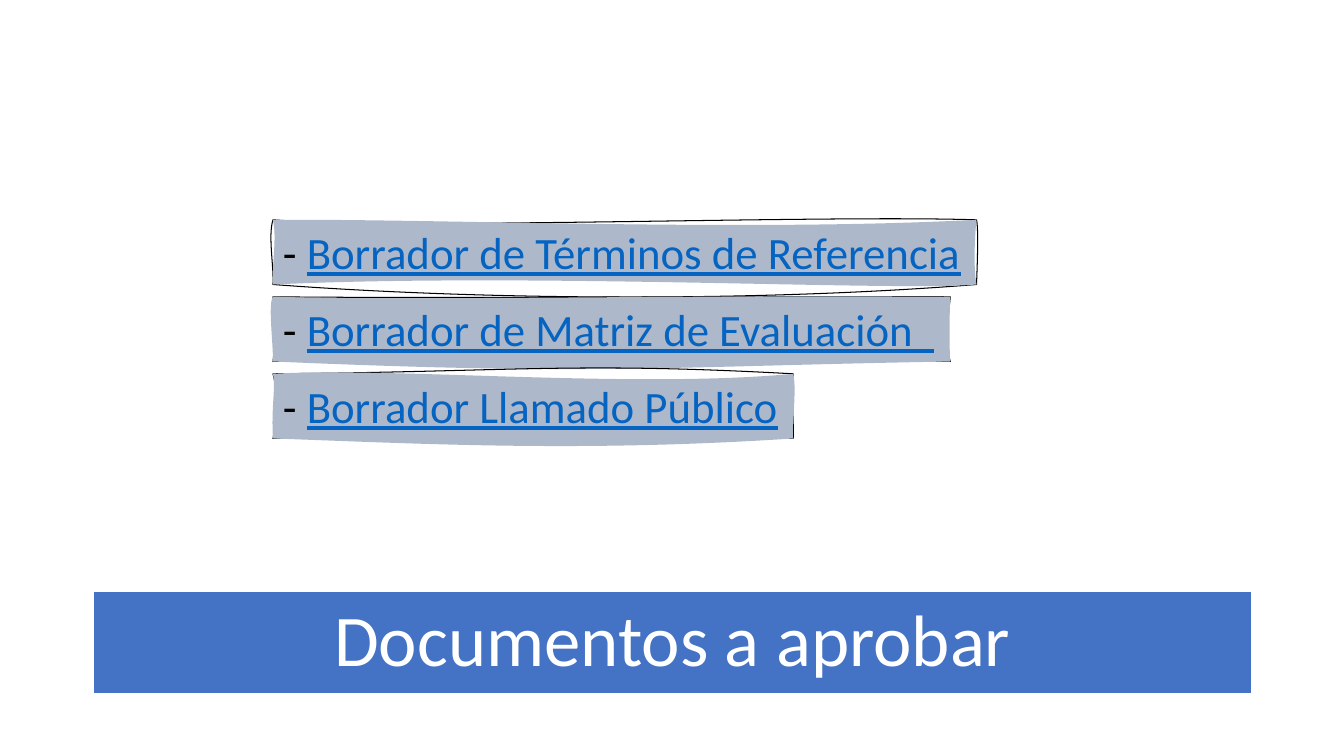
from pptx import Presentation
from pptx.dml.color import RGBColor
from pptx.enum.text import MSO_ANCHOR, MSO_AUTO_SIZE, PP_ALIGN
from pptx.oxml.ns import qn
from pptx.util import Cm, Pt
from lxml import etree

LEFT, CENTER = PP_ALIGN.LEFT, PP_ALIGN.CENTER
MIDDLE = MSO_ANCHOR.MIDDLE
FIT_SHAPE, NO_FIT = MSO_AUTO_SIZE.SHAPE_TO_FIT_TEXT, MSO_AUTO_SIZE.NONE

BLUE = RGBColor(0x44, 0x72, 0xC4)
GREY_BLUE = RGBColor(0xAD, 0xB9, 0xCA)
LINK_BLUE = RGBColor(0x05, 0x63, 0xC1)
BLACK = RGBColor(0, 0, 0)
WHITE = RGBColor(0xFF, 0xFF, 0xFF)
FONT = "Calibri"

UNITS_PER_CM = 100 / 2.54
LABEL_HEIGHT = Cm(1.63)
LABEL_PITCH = Cm(1.94)

# Text, width, then the curve controls of the outline and of the fill:
# two points for each of the top, right, bottom and left sides
DOCUMENTS = [
    ("Borrador de Términos de Referencia", Cm(17.73),
     [(135, 10, 543, -5), (700, 8, 699, 40), (471, 82, 199, 79), (1, 46, -5, 16)],
     [(175, -1, 463, 12), (696, 18, 695, 49), (619, 71, 258, 52), (-1, 41, 4, 18)]),
    ("Borrador de Matriz de Evaluación  ", Cm(17.07),
     [(223, 2, 505, -1), (669, 28, 667, 49), (475, 58, 139, 57), (3, 46, -2, 9)],
     [(140, 4, 392, -2), (671, 17, 671, 54), (386, 69, 324, 78), (0, 42, -5, 7)]),
    ("Borrador Llamado Público", Cm(13.11),
     [(239, -2, 296, -12), (514, 22, 517, 54), (341, 52, 179, 53), (4, 44, 5, 19)],
     [(116, -7, 357, 15), (520, 16, 514, 55), (302, 78, 145, 69), (-2, 33, 3, 13)]),
]


def add_point(parent, x, y):
    etree.SubElement(parent, qn("a:pt"), x=str(x), y=str(y))


def add_curved_path(path_list, width, height, sides, **options):
    """Add a closed path whose four sides are Bézier curves."""
    path = etree.SubElement(path_list, qn("a:path"), w=str(width), h=str(height), **options)
    add_point(etree.SubElement(path, qn("a:moveTo")), 0, 0)
    corners = [(width, 0), (width, height), (0, height), (0, 0)]
    for (x1, y1, x2, y2), corner in zip(sides, corners):
        curve = etree.SubElement(path, qn("a:cubicBezTo"))
        for point in ((x1, y1), (x2, y2), corner):
            add_point(curve, *point)
    etree.SubElement(path, qn("a:close"))


def add_label(slide, left, top, width, height, text, outline, filling):
    """Add one hand-drawn label with its dash and underlined text."""
    builder = slide.shapes.build_freeform(left, top)
    builder.add_line_segments(
        [(left + width, top), (left + width, top + height), (left, top + height)])
    shape = builder.convert_to_shape()
    shape.shadow.inherit = False
    shape.fill.solid()
    shape.fill.fore_color.rgb = GREY_BLUE
    shape.line.color.rgb = BLACK
    shape.line.width = Pt(0.75)

    # Curved sides, with line and fill slightly apart
    path_list = shape._element.spPr.find(".//" + qn("a:pathLst"))
    for straight_path in list(path_list):
        path_list.remove(straight_path)
    size = [round(length.cm * UNITS_PER_CM) for length in (width, height)]
    add_curved_path(path_list, *size, outline, fill="none")
    add_curved_path(path_list, *size, filling, stroke="0")

    frame = shape.text_frame
    frame.word_wrap = False
    frame.auto_size = FIT_SHAPE
    frame.vertical_anchor = MSO_ANCHOR.TOP
    paragraph = frame.paragraphs[0]
    paragraph.alignment = LEFT
    paragraph.font.name = FONT
    paragraph.font.size = Pt(32)
    for words, color, underline in (("- ", BLACK, False), (text, LINK_BLUE, True)):
        run = paragraph.add_run()
        run.text = words
        run.font.color.rgb = color
        run.font.underline = underline


def add_documents(slide, left, top):
    """Stack the document labels at an equal pitch."""
    for row, (text, width, outline, filling) in enumerate(DOCUMENTS):
        add_label(slide, left, top + row * LABEL_PITCH, width, LABEL_HEIGHT,
                  text, outline, filling)


def add_title(slide, left, top, width, height):
    """Turn the title placeholder into a blue band."""
    title = slide.shapes.title
    title.left, title.top, title.width, title.height = left, top, width, height
    title.fill.solid()
    title.fill.fore_color.rgb = BLUE
    title.line.color.rgb = WHITE
    title.line.width = Pt(1.5)
    frame = title.text_frame
    frame.text = "Documentos a aprobar"
    frame.word_wrap = True
    frame.auto_size = NO_FIT
    frame.vertical_anchor = MIDDLE
    paragraph = frame.paragraphs[0]
    paragraph.alignment = CENTER
    paragraph.line_spacing = 0.9
    paragraph.font.name = FONT
    paragraph.font.size = Pt(52)
    paragraph.font.color.rgb = WHITE


def main():
    presentation = Presentation()
    presentation.slide_width = Cm(33.87)
    presentation.slide_height = Cm(19.05)
    slide = presentation.slides.add_slide(presentation.slide_layouts[5])
    add_title(slide, Cm(2.34), Cm(14.88), Cm(29.21), Cm(2.62))
    add_documents(slide, Cm(6.88), Cm(5.54))
    presentation.save("out.pptx")


if __name__ == "__main__":
    main()
